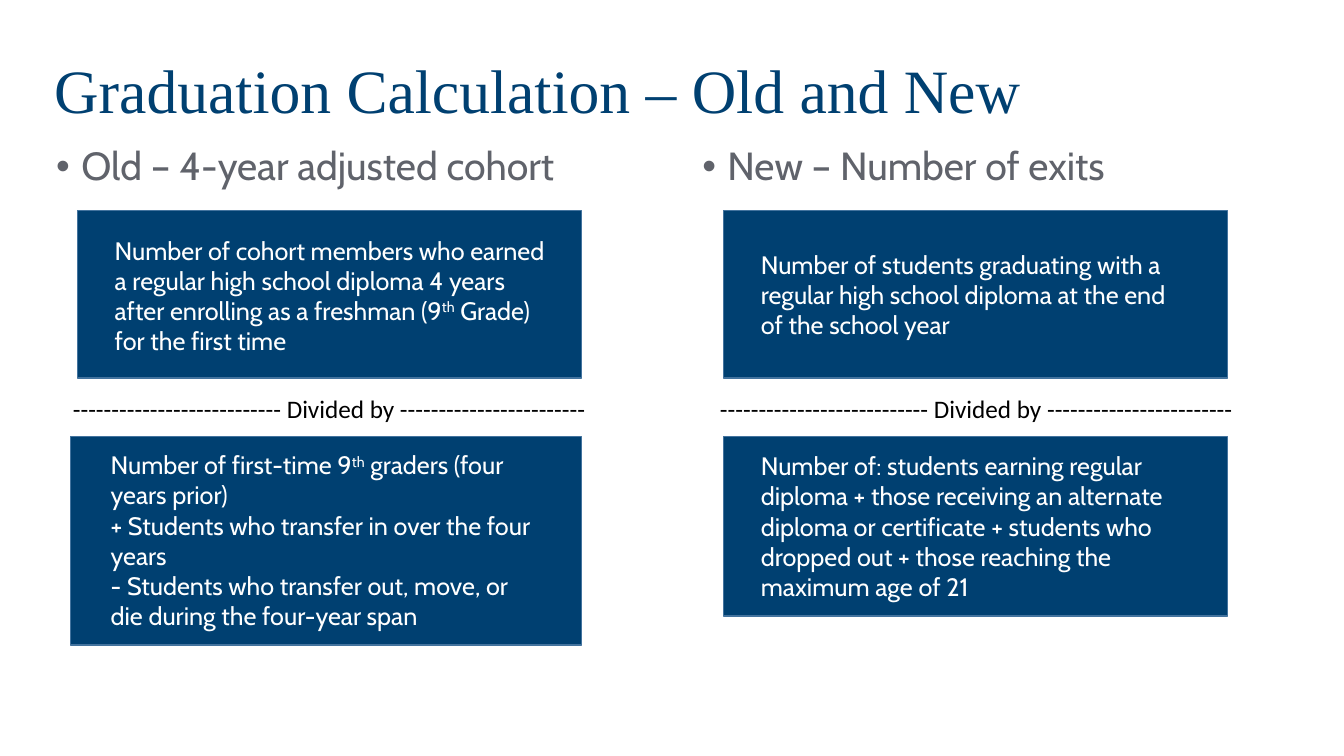
from dataclasses import dataclass

from lxml.etree import SubElement
from pptx import Presentation
from pptx.dml.color import RGBColor
from pptx.enum.shapes import MSO_SHAPE as Shape
from pptx.enum.text import MSO_ANCHOR as Anchor, PP_ALIGN as Align
from pptx.oxml.ns import qn
from pptx.util import Pt

COLORS = {"navy": "004071", "edge": "43739E", "gray": "60636B",
          "white": "FFFFFF", "black": "000000"}
DIVIDER = "--------------------------- Divided by ------------------------"
SUPERSCRIPT = "th"


@dataclass(frozen=True)
class Box:
    left: float
    top: float
    width: float
    height: float

    def lengths(self) -> list:
        return [Pt(v) for v in (self.left, self.top, self.width, self.height)]


@dataclass(frozen=True)
class Style:
    font: str
    size: float
    color: str


@dataclass(frozen=True)
class Panel:
    frame: Box
    label: Box
    paragraphs: list[list[str]]


@dataclass(frozen=True)
class Column:
    heading: str
    heading_left: float
    divider_left: float
    numerator: Panel
    denominator: Panel


TITLE = Style("Times New Roman", 44, "navy")
HEADING = Style("Cabin", 28, "gray")
BODY = Style("Cabin", 18, "white")
DIVISION = Style("Calibri", 18, "black")

COLUMNS = [
    Column(
        "Old – 4-year adjusted cohort", 33.1, 42.5,
        Panel(Box(55.4, 150.5, 360, 119.5), Box(74.9, 164.2, 321.8, 94.3), [
            ["Number of cohort members who earned a regular high school diploma "
             "4 years after enrolling as a freshman (9", SUPERSCRIPT,
             " Grade) for the first time"]]),
        Panel(Box(50.4, 311.8, 365, 149), Box(72, 317.5, 321.8, 138.2), [
            ["Number of first-time 9", SUPERSCRIPT, " graders (four years prior)"],
            ["+ Students who transfer in over the four years"],
            ["- Students who transfer out, move, or die during the four-year span"]])),
    Column(
        "New – Number of exits", 494.6, 504.7,
        Panel(Box(517, 150.5, 360, 119.5), Box(536.4, 174.2, 321.8, 72.7), [
            ["Number of students graduating with a regular high school diploma "
             "at the end of the school year"]]),
        Panel(Box(517, 311.8, 360, 128.2), Box(536.4, 318.2, 321.8, 116.6), [
            ["Number of: students earning regular diploma + those receiving an "
             "alternate diploma or certificate + students who dropped out + "
             "those reaching the maximum age of 21"]])),
]


def color(name: str) -> RGBColor:
    return RGBColor.from_string(COLORS[name])


def add_text(shapes, box: Box, paragraphs: list[list[str]], style: Style):
    frame = shapes.add_textbox(*box.lengths()).text_frame
    frame.word_wrap = True
    frame.text = "\n".join(parts[0] for parts in paragraphs)
    for paragraph, parts in zip(frame.paragraphs, paragraphs):
        for part in parts[1:]:
            paragraph.add_run().text = part
        for run in paragraph.runs:
            run.font.name = style.font
            run.font.size = Pt(style.size)
            run.font.color.rgb = color(style.color)
            if run.text == SUPERSCRIPT:
                run.font._element.set("baseline", "30000")
    return frame


def add_title(shapes, title: str) -> None:
    frame = add_text(shapes, Box(31.7, 11.5, 895, 110.2), [[title]], TITLE)
    frame.vertical_anchor = Anchor.MIDDLE
    frame.paragraphs[0].line_spacing = 0.9


def add_heading(shapes, column: Column) -> None:
    box = Box(column.heading_left, 101.5, 432, 368)
    paragraph = add_text(shapes, box, [[column.heading]], HEADING).paragraphs[0]
    paragraph.line_spacing = 0.9
    properties = paragraph._p.get_or_add_pPr()
    properties.set("marL", str(Pt(18)))
    properties.set("indent", str(Pt(-18)))
    SubElement(properties, qn("a:buFont")).set("typeface", "Arial")
    SubElement(properties, qn("a:buChar")).set("char", "•")


def add_panel(shapes, panel: Panel) -> None:
    group = shapes.add_group_shape().shapes
    block = group.add_shape(Shape.RECTANGLE, *panel.frame.lengths())
    block.shadow.inherit = False
    block.fill.solid()
    block.fill.fore_color.rgb = color("navy")
    block.line.color.rgb = color("edge")
    block.line.width = Pt(1)
    add_text(group, panel.label, panel.paragraphs, BODY)


def add_column(shapes, column: Column) -> None:
    add_heading(shapes, column)
    add_panel(shapes, column.numerator)
    box = Box(column.divider_left, 277.2, 385.2, 29)
    division = add_text(shapes, box, [[DIVIDER]], DIVISION)
    division.paragraphs[0].alignment = Align.CENTER
    add_panel(shapes, column.denominator)


def main() -> None:
    deck = Presentation()
    deck.slide_width, deck.slide_height = Pt(960), Pt(540)
    shapes = deck.slides.add_slide(deck.slide_layouts[6]).shapes
    add_title(shapes, "Graduation Calculation – Old and New")
    for column in COLUMNS:
        add_column(shapes, column)
    deck.save("out.pptx")


if __name__ == "__main__":
    main()
